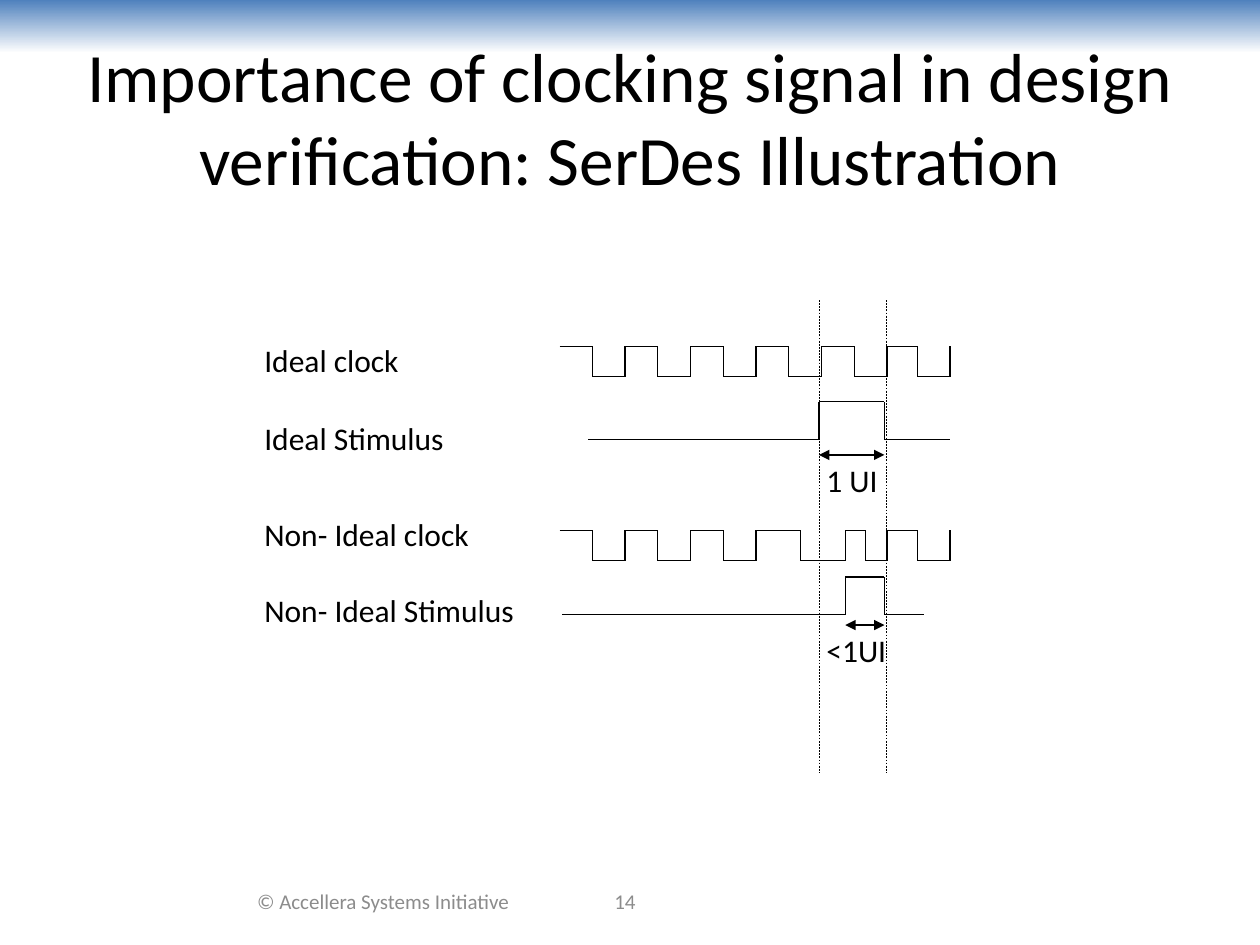
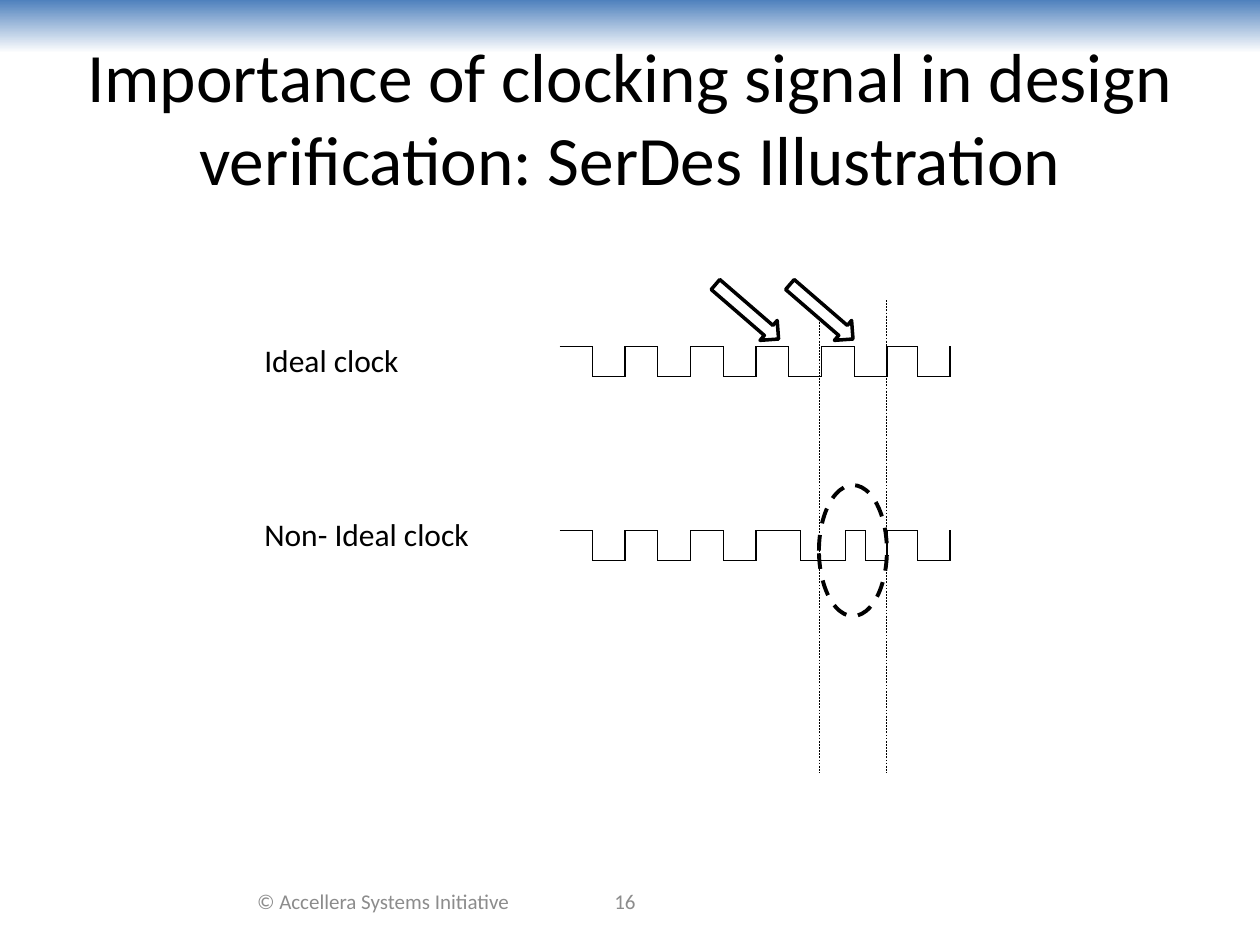
from itertools import pairwise

from lxml import etree
from pptx import Presentation
from pptx import util as u
from pptx.dml.color import RGBColor
from pptx.enum import dml, shapes, text
from pptx.oxml.ns import qn

COLORS = {"ink": "000000", "paper": "FFFFFF", "band": "4F81BD", "footer": "8C8C8C"}
FONT = "Calibri"
TITLE = "Importance of clocking signal in design verification: SerDes Illustration"
FOOTER = "© Accellera Systems Initiative"

# Horizontal positions in cm, from the start of a trace to its end
HALF_PERIOD = 0.66
REGULAR_EDGES = [11.28 + HALF_PERIOD * i for i in range(11)]
LAST_EDGES = [18.49, 19.15]
IDEAL_EDGES = REGULAR_EDGES + LAST_EDGES
NON_IDEAL_EDGES = REGULAR_EDGES[:7] + [16.13, 17.05, 17.45, REGULAR_EDGES[10]] + LAST_EDGES
UNIT_INTERVAL = (16.51, 17.86)

LABEL_LEFT = 5.08
IDEAL_CLOCK_TOP, NON_IDEAL_CLOCK_TOP = 6.98, 10.69
CLOCK_HEIGHT, STIMULUS_HEIGHT = 0.61, 0.76


def rgb(name):
    return RGBColor.from_string(COLORS[name])


def cm(*lengths):
    return [u.Cm(length) for length in lengths]


def write(frame, words, size=18, color="ink", align=text.PP_ALIGN.LEFT,
          anchor=text.MSO_ANCHOR.TOP, fit=text.MSO_AUTO_SIZE.NONE):
    frame.word_wrap = True
    frame.auto_size = fit
    frame.vertical_anchor = anchor
    paragraph = frame.paragraphs[0]
    paragraph.alignment = align
    run = paragraph.add_run()
    run.text = words
    run.font.name = FONT
    run.font.size = u.Pt(size)
    run.font.color.rgb = rgb(color)


def add_label(parent, words, left, top, width, **style):
    box = parent.add_textbox(*cm(left, top, width, 1.02))
    write(box.text_frame, words, **style)


def add_signal_name(slide, words, top, width):
    add_label(slide.shapes, words, LABEL_LEFT, top, width,
              fit=text.MSO_AUTO_SIZE.SHAPE_TO_FIT_TEXT)


def add_line(parent, start, end, width=0.75, dash=None, arrows=False):
    line = parent.add_connector(shapes.MSO_CONNECTOR.STRAIGHT, *cm(*start, *end))
    line.line.color.rgb = rgb("ink")
    line.line.width = u.Pt(width)
    if dash:
        line.line.dash_style = dash
    if arrows:
        for tip in ("a:headEnd", "a:tailEnd"):
            etree.SubElement(line.line._get_or_add_ln(), qn(tip), type="triangle")
    etree.SubElement(line.element.spPr, qn("a:effectLst"))


def add_outlined(slide, kind, box, width):
    shape = slide.shapes.add_shape(kind, *cm(*box))
    shape.shadow.inherit = False
    shape.fill.solid()
    shape.fill.fore_color.rgb = rgb("paper")
    shape.line.color.rgb = rgb("ink")
    shape.line.width = u.Pt(width)
    return shape


def add_trace(parent, edges, top, height, high):
    """Draw a square wave that changes level at every inner edge."""
    points = []
    for start, end in pairwise(edges):
        level = top if high else top + height
        points += [(start, level), (end, level)]
        high = not high
    for start, end in pairwise(points):
        add_line(parent, start, end)


def add_clock(slide, name, edges, top, name_top, name_width):
    group = slide.shapes.add_group_shape().shapes
    add_trace(group, edges, top, CLOCK_HEIGHT, high=True)
    add_line(group, (edges[-1], top), (edges[-1], top + CLOCK_HEIGHT))
    add_signal_name(slide, name, name_top, name_width)


def add_stimulus(slide, name, edges, top, span_top, span_name, name_top, name_width):
    """Draw one pulse with its measured width below it."""
    group = slide.shapes.add_group_shape().shapes
    add_trace(group, edges, top, STIMULUS_HEIGHT, high=False)
    add_line(group, (edges[1], span_top), (edges[2], span_top), arrows=True)
    add_label(group, span_name, 16.41, span_top, 1.9,
              fit=text.MSO_AUTO_SIZE.SHAPE_TO_FIT_TEXT)
    add_signal_name(slide, name, name_top, name_width)


def add_clocks(slide):
    for x in UNIT_INTERVAL:
        add_line(slide.shapes, (x, 6.05), (x, 15.57), 0.25, dml.MSO_LINE.DASH)
    add_clock(slide, "Ideal clock", IDEAL_EDGES, IDEAL_CLOCK_TOP, 6.76, 4.34)
    add_clock(slide, "Non- Ideal clock", NON_IDEAL_EDGES, NON_IDEAL_CLOCK_TOP, 10.26, 5.41)


def add_master_band(prs, slide):
    band = slide.shapes.add_shape(shapes.MSO_SHAPE.RECTANGLE, 0, 0, prs.slide_width, u.Cm(1.07))
    band.shadow.inherit = False
    band.line.fill.background()
    band.fill.gradient()
    band.fill.gradient_angle = 270
    for stop, color in zip(band.fill.gradient_stops, ("band", "paper")):
        stop.color.rgb = rgb(color)
    prs.slide_master.shapes.element.insert(2, band.element)


def add_slide(prs, number):
    slide = prs.slides.add_slide(prs.slide_layouts[5])
    title = slide.shapes.title
    title.left, title.top, title.width, title.height = cm(1.27, 0.76, 22.86, 3.18)
    centred = {"align": text.PP_ALIGN.CENTER, "anchor": text.MSO_ANCHOR.MIDDLE}
    write(title.text_frame, TITLE, size=39.6, **centred)
    for words, left, width in ((FOOTER, 4.65, 6.15), (str(number), 10.16, 4.88)):
        add_label(slide.shapes, words, left, 17.65, width, size=12, color="footer", **centred)
    return slide


def add_stimulus_slide(prs):
    slide = add_slide(prs, 14)
    add_master_band(prs, slide)
    add_clocks(slide)
    add_stimulus(slide, "Ideal Stimulus", (11.86, 16.51, 17.83, 19.15), 8.1,
                 9.17, "1 UI", 8.33, 4.34)
    add_stimulus(slide, "Non- Ideal Stimulus", (11.33, 17.04, 17.83, 18.62), 11.63,
                 12.6, "<1UI", 11.79, 6.15)


def add_jitter_slide(prs):
    slide = add_slide(prs, 16)
    short_pulse = add_outlined(slide, shapes.MSO_SHAPE.OVAL, (16.51, 9.78, 1.37, 2.64), 2.25)
    short_pulse.line.dash_style = dml.MSO_LINE.DASH
    add_clocks(slide)
    for left in (14.22, 15.72):
        pointer = add_outlined(slide, shapes.MSO_SHAPE.RIGHT_ARROW, (left, 6.02, 1.68, 0.53), 2)
        pointer.rotation = 40.8


def main():
    prs = Presentation()
    prs.slide_width, prs.slide_height = cm(25.4, 19.05)
    add_stimulus_slide(prs)
    add_jitter_slide(prs)
    prs.save("out.pptx")


if __name__ == "__main__":
    main()
